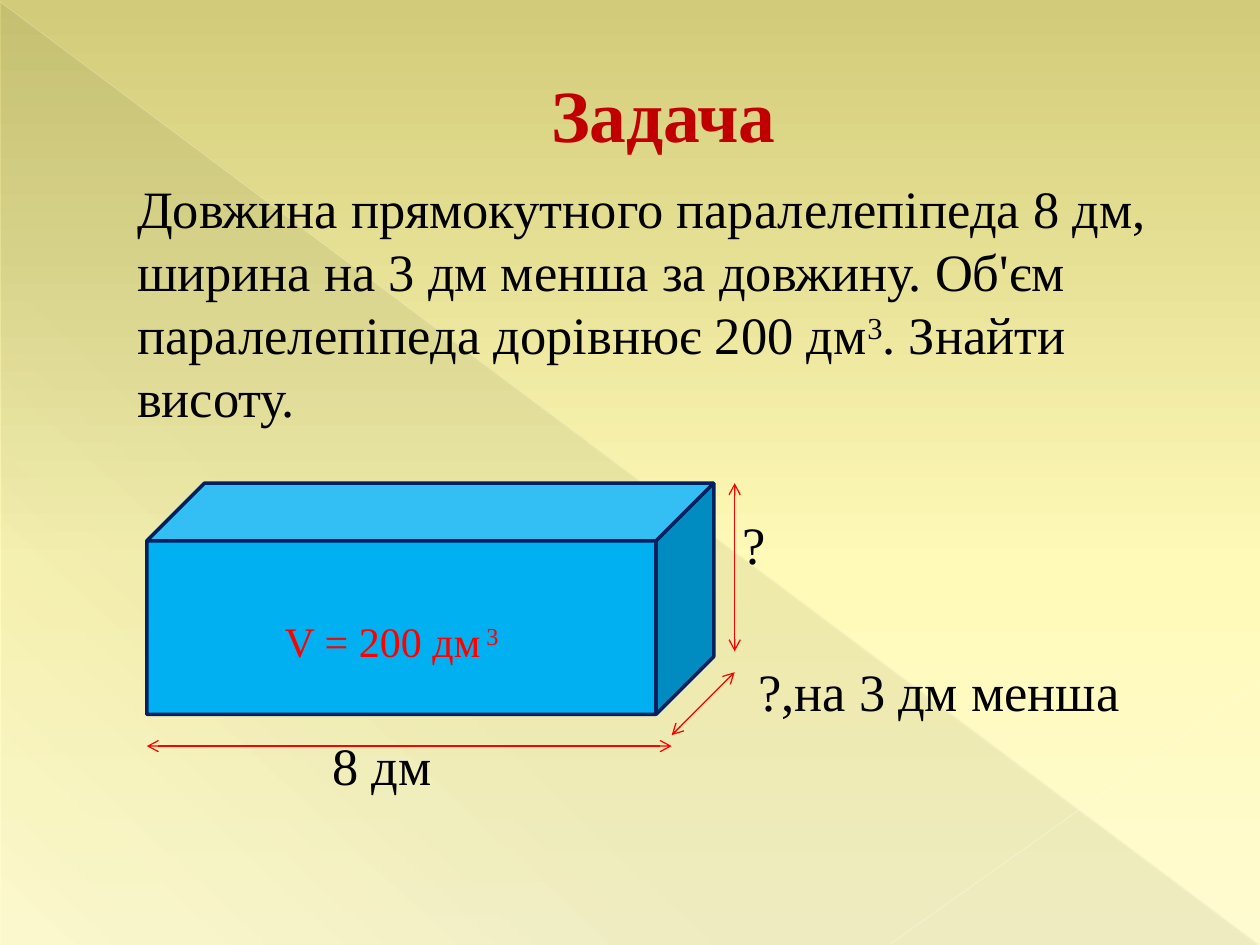
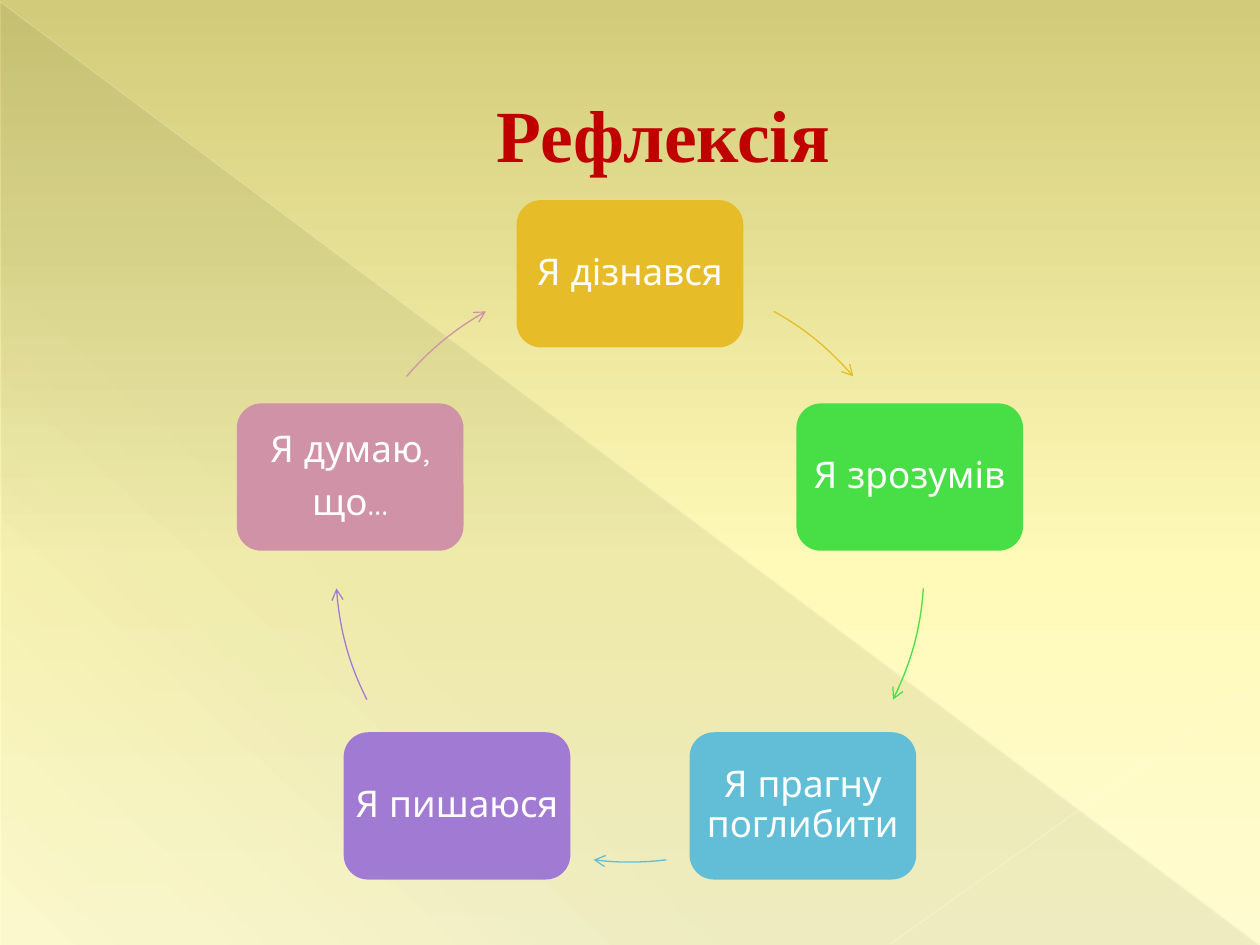
import math
from lxml import etree
from pptx import Presentation
from pptx.dml import color as dml
from pptx.enum import shapes as sh, text as tx
from pptx.oxml import ns
from pptx.util import Cm, Pt

SERIF, SANS = "Times New Roman", "Quicksand"
TITLE_RED, TITLE_OUTLINE = "C00000", "727D65"
BLACK, WHITE, RED = "000000", "FFFFFF", "FF0000"
CUBE_BLUE, CUBE_EDGE = "00B0F0", "002060"
SLIDE_WIDTH, SLIDE_HEIGHT = 25.4, 19.05
TITLE_LEFT, TITLE_TOP, TITLE_WIDTH = 1.27, 0.74, 22.86

BACKGROUND = [(0, "D2CB79", 100), (60, "FFFAB8", 100), (100, "FFFBD1", 100)]
SHADE = [(0, "444D26", 10), (70, "444D26", 8), (100, "444D26", 1)]

PROBLEM = [
    ("Довжина прямокутного паралелепіпеда 8 дм, ширина на 3 дм менша за "
     "довжину. Об'єм паралелепіпеда дорівнює 200 дм", False),
    ("3", True),
    (". Знайти висоту.", False),
]
# Text parts, left indent in cm, space before in points
PROBLEM_LINES = [
    (PROBLEM, 1.24, 0),
    ([("?", False)], 13.45, 48),
    ([("?,на 3 дм менша", False)], 13.76, 48),
    ([("8 дм", False)], 5.18, 6),
]
# Text, colour, start and end angle of the arrow that follows
STEPS = [
    ("Я дізнався", "E7BC29", -60.7, -40.6),
    ("Я зрозумів", "47DE46", 4, 26.6),
    ("Я прагну поглибити", "62BED7", 82.9, 97.1),
    ("Я пишаюся", "A17BD3", 153.4, 176),
    ("Я думаю,\nщо…", "D092A7", 220.6, 240.7),
]


def rgb(value):
    return dml.RGBColor.from_string(value)


def add_xml(parent, tag, **attributes):
    return etree.SubElement(parent, ns.qn(tag), **attributes)


def style_font(font, face, size, colour):
    font.name, font.size = face, Pt(size)
    font.color.rgb = rgb(colour)


def indent(paragraph, left):
    """Set a left indent in cm, with no hanging first line and no bullet."""
    properties = paragraph._p.get_or_add_pPr()
    properties.set("marL", str(Cm(left)))
    properties.set("indent", "0")
    add_xml(properties, "a:buNone")


def write_parts(paragraph, parts, face, size, colour):
    """Write (text, raised) parts as runs."""
    for words, raised in parts:
        run = paragraph.add_run()
        run.text = words
        style_font(run.font, face, size, colour)
        if raised:
            run._r.get_or_add_rPr().set("baseline", "30000")


def set_gradient(fill, owner, stops, angle):
    """Fill with (position, colour, opacity) stops; the angle runs clockwise."""
    fill.gradient()
    fill.gradient_angle = 360 - angle
    stop_list = owner.xpath(".//a:gradFill/a:gsLst")[0]
    for old_stop in list(stop_list):
        stop_list.remove(old_stop)
    for position, colour, opacity in stops:
        stop = add_xml(stop_list, "a:gs", pos=str(position * 1000))
        tint = add_xml(stop, "a:srgbClr", val=colour)
        add_xml(tint, "a:alpha", val=str(opacity * 1000))


def style_line(shape, colour, width, ends=(), opacity=100):
    shape.line.color.rgb = rgb(colour)
    shape.line.width = Pt(width)
    outline = shape.element.xpath(".//a:ln")[0]
    if opacity < 100:
        add_xml(outline.xpath(".//a:srgbClr")[0], "a:alpha", val=str(opacity * 1000))
    for end in ends:
        add_xml(outline, end, type="arrow")


def add_line(slide, start, finish, colour, width, **options):
    line = slide.shapes.add_connector(
        sh.MSO_CONNECTOR.STRAIGHT, *map(Cm, (*start, *finish)))
    style_line(line, colour, width, **options)
    add_xml(line.element.spPr, "a:effectLst")
    return line


def add_preset(slide, kind, left, top, width, height):
    shape = slide.shapes.add_shape(kind, *map(Cm, (left, top, width, height)))
    shape.shadow.inherit = False
    return shape


def decorate_master(master, slide):
    """Draw the shared backdrop and move it behind the master's placeholders."""
    set_gradient(master.background.fill, master.element, BACKGROUND, 90)
    corner = add_preset(slide, sh.MSO_SHAPE.RIGHT_TRIANGLE, 0.03, 0.05, 25.35, 19)
    set_gradient(corner.fill, corner.element, SHADE, 133)
    corner.line.fill.background()
    diagonal = add_line(slide, (0, 0.03), (25.37, 19.02), "FFFDE3", 0.39, opacity=35)
    crossing = add_line(slide, (SLIDE_WIDTH, 13.74), (17.96, 19.02),
                        "FFFDE6", 0.47, opacity=45)
    for order, part in enumerate((corner, diagonal, crossing)):
        part.element.xpath(".//p:cNvPr")[0].set("id", str(101 + order))
        master.shapes.element.insert(2 + order, part.element)


def place(placeholder, left, top, width, height):
    placeholder.left, placeholder.top = Cm(left), Cm(top)
    placeholder.width, placeholder.height = Cm(width), Cm(height)
    placeholder.text_frame.auto_size = tx.MSO_AUTO_SIZE.NONE


def fill_title(slide, words, height):
    title = slide.shapes.title
    place(title, TITLE_LEFT, TITLE_TOP, TITLE_WIDTH, height)
    frame = title.text_frame
    frame.text = words
    frame.vertical_anchor = tx.MSO_ANCHOR.MIDDLE
    heading = frame.paragraphs[0]
    indent(heading, 1.35)
    heading.alignment = tx.PP_ALIGN.CENTER
    run = heading.runs[0]
    style_font(run.font, SERIF, 42, TITLE_RED)
    run.font.bold = True
    outline = etree.Element(ns.qn("a:ln"), w=str(Pt(0.5)))
    add_xml(add_xml(outline, "a:solidFill"), "a:srgbClr", val=TITLE_OUTLINE)
    run._r.get_or_add_rPr().insert(0, outline)


def fill_problem(body, left, top, width, height):
    place(body, left, top, width, height)
    frame = body.text_frame
    for number, (parts, margin, gap) in enumerate(PROBLEM_LINES):
        paragraph = frame.add_paragraph() if number else frame.paragraphs[0]
        indent(paragraph, margin)
        paragraph.space_before = Pt(gap)
        paragraph.line_spacing = Pt(36)
        write_parts(paragraph, parts, SERIF, 30, BLACK)


def draw_cuboid(slide, left, top, width, height):
    """Draw the cuboid, its three dimension arrows and its volume."""
    cuboid = add_preset(slide, sh.MSO_SHAPE.CUBE, left, top, width, height)
    cuboid.fill.solid()
    cuboid.fill.fore_color.rgb = rgb(CUBE_BLUE)
    style_line(cuboid, CUBE_EDGE, 2)

    near, far = left + 10.58, left + 11.85
    dimensions = [
        ((left, top + 5.3), (near, top + 5.3)),
        ((near, top + 5.08), (far, top + 3.81)),
        ((far, top + 3.39), (far, top)),
    ]
    for start, finish in dimensions:
        add_line(slide, start, finish, RED, 0.75, ends=("a:headEnd", "a:tailEnd"))

    volume = slide.shapes.add_textbox(
        Cm(left + 2.53), Cm(top + 2.55), Cm(5.5), Cm(1.27)).text_frame
    volume.word_wrap = True
    write_parts(volume.paragraphs[0], [("V = 200 дм", False), (" 3", True)],
                SERIF, 24, RED)


def draw_step(slide, words, colour, left, top, width, height):
    card = add_preset(slide, sh.MSO_SHAPE.ROUNDED_RECTANGLE, left, top, width, height)
    card.fill.solid()
    card.fill.fore_color.rgb = rgb(colour)
    card.line.fill.background()
    frame = card.text_frame
    frame.text = words
    frame.word_wrap = True
    frame.vertical_anchor = tx.MSO_ANCHOR.MIDDLE
    frame.margin_left = frame.margin_right = Cm(0.08)
    frame.margin_top = frame.margin_bottom = Cm(0.08)
    for paragraph in frame.paragraphs:
        paragraph.alignment = tx.PP_ALIGN.CENTER
        paragraph.line_spacing = 0.9
        paragraph.space_after = Pt(7.35)
        style_font(paragraph.runs[0].font, SANS, 21, WHITE)


def draw_cycle(slide, left, top, diameter):
    """Set the steps evenly on a circle, with an arc arrow after each."""
    radius = diameter / 2
    card_width, card_height = 4.57, 2.97
    for number, (words, colour, start, finish) in enumerate(STEPS):
        angle = math.radians(360 / len(STEPS) * number - 90)
        centre_x = left + radius * (1 + math.cos(angle))
        centre_y = top + radius * (1 + math.sin(angle))
        draw_step(slide, words, colour, centre_x - card_width / 2,
                  centre_y - card_height / 2, card_width, card_height)
        arrow = add_preset(slide, sh.MSO_SHAPE.ARC, left, top, diameter, diameter)
        # Adjustments count in 100000ths, arc angles in 60000ths of a degree
        for position, degrees in enumerate((start, finish)):
            arrow.adjustments[position] = degrees % 360 * 0.6
        arrow.fill.background()
        style_line(arrow, colour, 0.75, ends=("a:tailEnd",))


def build_problem_slide(slide):
    fill_title(slide, "Задача", 3.07)
    fill_problem(slide.placeholders[1], TITLE_LEFT, 3.43, TITLE_WIDTH, 14.5)
    draw_cuboid(slide, 2.96, 9.74, 11.43, 4.66)


def build_reflection_slide(slide):
    fill_title(slide, "Рефлексія", 3.89)
    draw_cycle(slide, 6.77, 5.52, 11.86)


def main():
    prs = Presentation()
    prs.slide_width, prs.slide_height = Cm(SLIDE_WIDTH), Cm(SLIDE_HEIGHT)
    problem = prs.slides.add_slide(prs.slide_layouts[1])
    reflection = prs.slides.add_slide(prs.slide_layouts[5])
    decorate_master(prs.slide_master, problem)
    build_problem_slide(problem)
    build_reflection_slide(reflection)
    prs.save("out.pptx")


if __name__ == "__main__":
    main()
